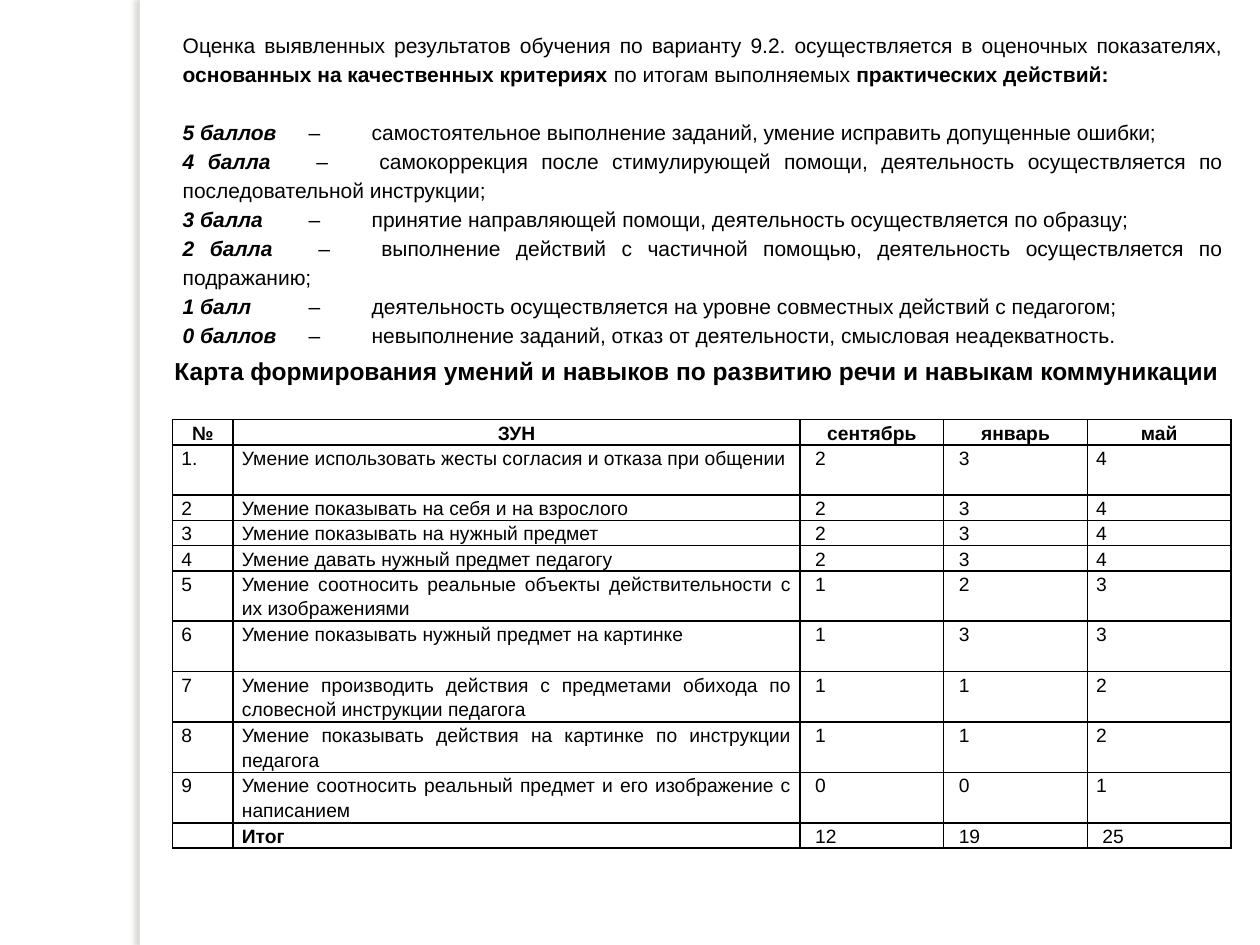
from lxml.etree import SubElement
from pptx import Presentation
from pptx.dml.color import RGBColor
from pptx.enum.shapes import MSO_SHAPE
from pptx.enum.text import MSO_ANCHOR, MSO_AUTO_SIZE, PP_ALIGN as Align
from pptx.oxml.ns import qn
from pptx.util import Inches, Pt

BLACK = RGBColor(0x00, 0x00, 0x00)
WHITE = RGBColor(0xFF, 0xFF, 0xFF)
SHADOW = RGBColor(0x73, 0x6F, 0x63)
FONT = "Arial"
LINE_SPACING = 1.15

INTRO = [
    ("Оценка выявленных результатов обучения по варианту 9.2. осуществляется "
     "в оценочных показателях, ", False),
    ("основанных на качественных критериях", True),
    (" по итогам выполняемых ", False),
    ("практических действий:", True),
]
# Score, meaning, tab stops of the dash and of the text after it
SCORES = [
    ("5 баллов", "самостоятельное выполнение заданий, умение исправить допущенные ошибки;",
     (0.84, 0.98)),
    ("4 балла", "самокоррекция после стимулирующей помощи, деятельность осуществляется "
     "по последовательной инструкции;", (1.14, 1.37)),
    ("3 балла", "принятие направляющей помощи, деятельность осуществляется по образцу;",
     (0.78, 0.92)),
    ("2 балла", "выполнение действий с частичной помощью, деятельность осуществляется "
     "по подражанию;", (0.78, 0.96)),
    ("1 балл", "деятельность осуществляется на уровне совместных действий с педагогом;",
     (0.78, 0.96)),
    ("0 баллов", "невыполнение заданий, отказ от деятельности, смысловая неадекватность.",
     (0.84, 0.98)),
]
HEADING = "Карта формирования умений и навыков по развитию речи и навыкам коммуникации"

COLUMNS = [0.48, 4.5, 1.14, 1.14, 1.14]
ROW_HEIGHT = 0.2
# Lines of text in the row, then its cells
SKILLS = [
    (1, "№", "ЗУН", "сентябрь", "январь", "май"),
    (2, "1.", "Умение использовать жесты согласия и отказа при общении", "2", "3", "4"),
    (1, "2", "Умение показывать на себя и на взрослого", "2", "3", "4"),
    (1, "3", "Умение показывать на нужный предмет", "2", "3", "4"),
    (1, "4", "Умение давать нужный предмет педагогу", "2", "3", "4"),
    (2, "5", "Умение соотносить реальные объекты действительности с их изображениями",
     "1", "2", "3"),
    (2, "6", "Умение показывать нужный предмет на картинке", "1", "3", "3"),
    (2, "7", "Умение производить действия с предметами обихода по словесной "
     "инструкции педагога", "1", "1", "2"),
    (2, "8", "Умение показывать действия на картинке по инструкции педагога", "1", "1", "2"),
    (2, "9", "Умение соотносить реальный предмет и его изображение с написанием",
     "0", "0", "1"),
    (1, "", "Итог", "12", "19", "25"),
]


def set_format(target, **values):
    for name, value in values.items():
        setattr(target, name, value)


def add_span(para, text, size, bold=False, italic=False):
    span = para.add_run()
    span.text = text
    set_format(span.font, name=FONT, size=Pt(size), bold=bold, italic=italic)
    span.font.color.rgb = BLACK


def format_para(para, align, before=0):
    set_format(para, alignment=align, line_spacing=LINE_SPACING,
               space_before=Pt(before), space_after=Pt(0))


def place(shape, box):
    for name, value in zip(("left", "top", "width", "height"), box):
        setattr(shape, name, Inches(value))
    set_format(shape.text_frame, word_wrap=True, auto_size=MSO_AUTO_SIZE.NONE,
               vertical_anchor=MSO_ANCHOR.TOP)


def add_side_strip(page, box):
    strip = page.shapes.add_shape(MSO_SHAPE.RECTANGLE, *map(Inches, box))
    strip.fill.solid()
    strip.fill.fore_color.rgb = WHITE
    strip.line.fill.background()
    # Soft shadow falling to the left
    effects = SubElement(strip._element.spPr, qn("a:effectLst"))
    shadow = SubElement(effects, qn("a:outerShdw"), blurRad=str(Pt(3)), dist=str(Pt(3)),
                        dir="10800000", algn="tl", rotWithShape="0")
    color = SubElement(shadow, qn("a:srgbClr"), val=str(SHADOW))
    SubElement(color, qn("a:alpha"), val="25000")


def fill_criteria(body, box):
    place(body, box)
    frame = body.text_frame

    def plain_para(para, stops=()):
        props = para._p.get_or_add_pPr()
        props.set("marL", "0")
        props.set("indent", "0")
        SubElement(props, qn("a:buNone"))
        if stops:
            tabs = SubElement(props, qn("a:tabLst"))
            for stop in stops:
                SubElement(tabs, qn("a:tab"), pos=str(Inches(stop)), algn="l")

    intro = frame.paragraphs[0]
    plain_para(intro)
    format_para(intro, Align.JUSTIFY)
    for text, bold in INTRO:
        add_span(intro, text, 12, bold)

    for number, (score, meaning, stops) in enumerate(SCORES):
        para = frame.add_paragraph()
        plain_para(para, stops)
        format_para(para, Align.JUSTIFY, before=0 if number else 16.5)
        add_span(para, score, 12, bold=True, italic=True)
        add_span(para, f"\t–\t{meaning}", 12)


def fill_heading(title, box):
    place(title, box)
    set_format(title.text_frame, margin_left=Inches(0.05), margin_right=Inches(0.05))
    para = title.text_frame.paragraphs[0]
    format_para(para, Align.CENTER)
    add_span(para, HEADING, 14, bold=True)


def format_cell(cell, text, align, bold, left):
    set_format(cell, margin_left=Inches(left), margin_right=Inches(0.07),
               margin_top=0, margin_bottom=0)
    para = cell.text_frame.paragraphs[0]
    format_para(para, align)
    if text:
        add_span(para, text, 11, bold)
    else:
        SubElement(para._p, qn("a:endParaRPr"), sz="1100")
    # Thin black border on every side
    props = cell._tc.get_or_add_tcPr()
    for side in ("lnL", "lnR", "lnT", "lnB"):
        line = SubElement(props, qn(f"a:{side}"), w=str(Pt(1)))
        fill = SubElement(line, qn("a:solidFill"))
        SubElement(fill, qn("a:srgbClr"), val=str(BLACK))
    cell.fill.background()


def add_skill_table(page, box):
    table = page.shapes.add_table(len(SKILLS), len(COLUMNS), *map(Inches, box)).table
    set_format(table, first_row=False, horz_banding=False)
    for column, width in zip(table.columns, COLUMNS):
        column.width = Inches(width)
    last = len(SKILLS) - 1
    for row, (lines, *texts) in enumerate(SKILLS):
        table.rows[row].height = Inches(ROW_HEIGHT * lines)
        for col, text in enumerate(texts):
            if row == 0:
                align = Align.CENTER
            else:
                align = Align.JUSTIFY if col else Align.LEFT
            indented = row > 0 and (col in (2, 3) or (row == last and col == 4))
            bold = row == 0 or (row == last and col == 1)
            format_cell(table.cell(row, col), text, align, bold, 0.12 if indented else 0.07)


def main():
    deck = Presentation()
    set_format(deck, slide_width=Inches(10), slide_height=Inches(7.5))
    page = deck.slides.add_slide(deck.slide_layouts[1])
    page.background.fill.solid()
    page.background.fill.fore_color.rgb = WHITE

    add_side_strip(page, (1.11, 0, 0.08, 7.5))
    fill_criteria(page.placeholders[1], (1.35, 0.18, 8.46, 2.63))
    fill_heading(page.shapes.title, (1.28, 2.74, 8.5, 0.37))
    add_skill_table(page, (1.37, 3.33, sum(COLUMNS), 3.4))
    deck.save("out.pptx")


if __name__ == "__main__":
    main()
